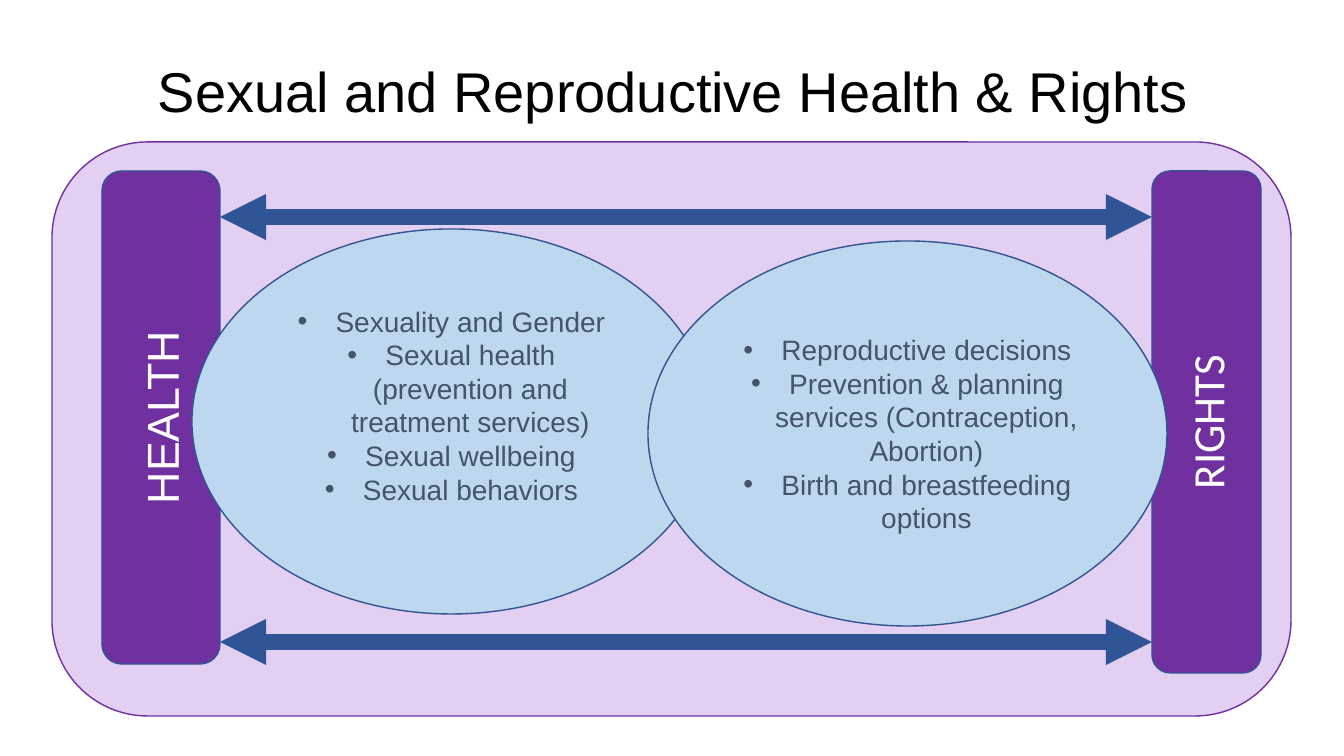
from pptx import Presentation
from pptx.dml.color import RGBColor
from pptx.enum.shapes import MSO_CONNECTOR, MSO_SHAPE
from pptx.enum.text import MSO_ANCHOR, PP_ALIGN
from pptx.oxml.ns import qn
from pptx.util import Pt
from lxml import etree

ROUNDED = MSO_SHAPE.ROUNDED_RECTANGLE
OVAL = MSO_SHAPE.OVAL
STRAIGHT = MSO_CONNECTOR.STRAIGHT
MIDDLE = MSO_ANCHOR.MIDDLE
CENTER = PP_ALIGN.CENTER

COLORS = {
    "title": "000000", "panel": "E2CFF1", "purple": "7030A0",
    "outline": "325491", "arrow": "2F5597", "oval": "BDD7EE",
    "topic": "44546A", "label": "FFFFFF",
}
TITLE = "Sexual and Reproductive Health & Rights"
TITLE_BOX = (93, 40, 1159, 109)
PANEL_BOX = (52, 142, 1239, 574)
PILLARS = [
    ("HEALTH", "Arial", (102, 171, 118, 493)),
    ("RIGHTS", "Calibri", (1152, 171, 109, 502)),
]
OVAL_SIZE = (519, 385)
TOPICS = [
    ((192, 229), 38, [
        "Sexuality and Gender",
        "Sexual health (prevention and treatment services)",
        "Sexual wellbeing",
        "Sexual behaviors",
    ]),
    ((648, 241), 5, [
        "Reproductive decisions",
        "Prevention & planning services (Contraception, Abortion)",
        "Birth and breastfeeding options",
    ]),
]
ARROW_ROWS = [217, 642]
BULLET_INDENT = 38
SCALE = 914400 / 100.8


def px(length):
    return round(length * SCALE)


def color(name):
    return RGBColor.from_string(COLORS[name])


def add_box(kind, place, fill, outline):
    box = page.shapes.add_shape(kind, *map(px, place))
    box.shadow.inherit = False
    box.fill.solid()
    box.fill.fore_color.rgb = color(fill)
    box.line.color.rgb = color(outline)
    box.line.width = Pt(1)
    return box


def write(box, lines, size, font, ink):
    frame = box.text_frame
    frame.word_wrap = True
    frame.vertical_anchor = MIDDLE
    frame.text = "\n".join(lines)
    for para in frame.paragraphs:
        para.alignment = CENTER
        for span in para.runs:
            span.font.size = Pt(size)
            span.font.name = font
            span.font.color.rgb = color(ink)
    return frame


def add_bullet(para):
    props = para._p.get_or_add_pPr()
    props.set("marL", str(px(BULLET_INDENT)))
    props.set("indent", str(-px(BULLET_INDENT)))
    etree.SubElement(props, qn("a:buFont")).set("typeface", "Arial")
    etree.SubElement(props, qn("a:buChar")).set("char", "•")


def add_arrow(left, right, y):
    arrow = page.shapes.add_connector(STRAIGHT, px(left), px(y), px(right), px(y))
    arrow.line.color.rgb = color("arrow")
    arrow.line.width = Pt(11)
    stroke = arrow.line._get_or_add_ln()
    for end in ("a:headEnd", "a:tailEnd"):
        etree.SubElement(stroke, qn(end)).set("type", "triangle")
    etree.SubElement(arrow._element.spPr, qn("a:effectLst"))


deck = Presentation()
deck.slide_width, deck.slide_height = px(1344), px(756)
page = deck.slides.add_slide(deck.slide_layouts[6])

add_box(ROUNDED, PANEL_BOX, "panel", "purple")

title = page.shapes.add_textbox(*map(px, TITLE_BOX))
title_frame = write(title, [TITLE], 40, "Arial", "title")
title_frame.paragraphs[0].line_spacing = 0.9

for name, font, place in PILLARS:
    pillar = add_box(ROUNDED, place, "purple", "outline")
    frame = write(pillar, [name], 32, font, "label")
    frame._txBody.bodyPr.set("vert", "vert270")

health, rights = [place for _, _, place in PILLARS]
arrow_left, arrow_right = health[0] + health[2], rights[0]

add_arrow(arrow_left, arrow_right, ARROW_ROWS[0])
for corner, bottom_inset, lines in TOPICS:
    oval = add_box(OVAL, corner + OVAL_SIZE, "oval", "outline")
    frame = write(oval, lines, 20, "Arial", "topic")
    frame.margin_bottom = px(bottom_inset)
    for para in frame.paragraphs:
        add_bullet(para)
add_arrow(arrow_left, arrow_right, ARROW_ROWS[1])

deck.save("out.pptx")
